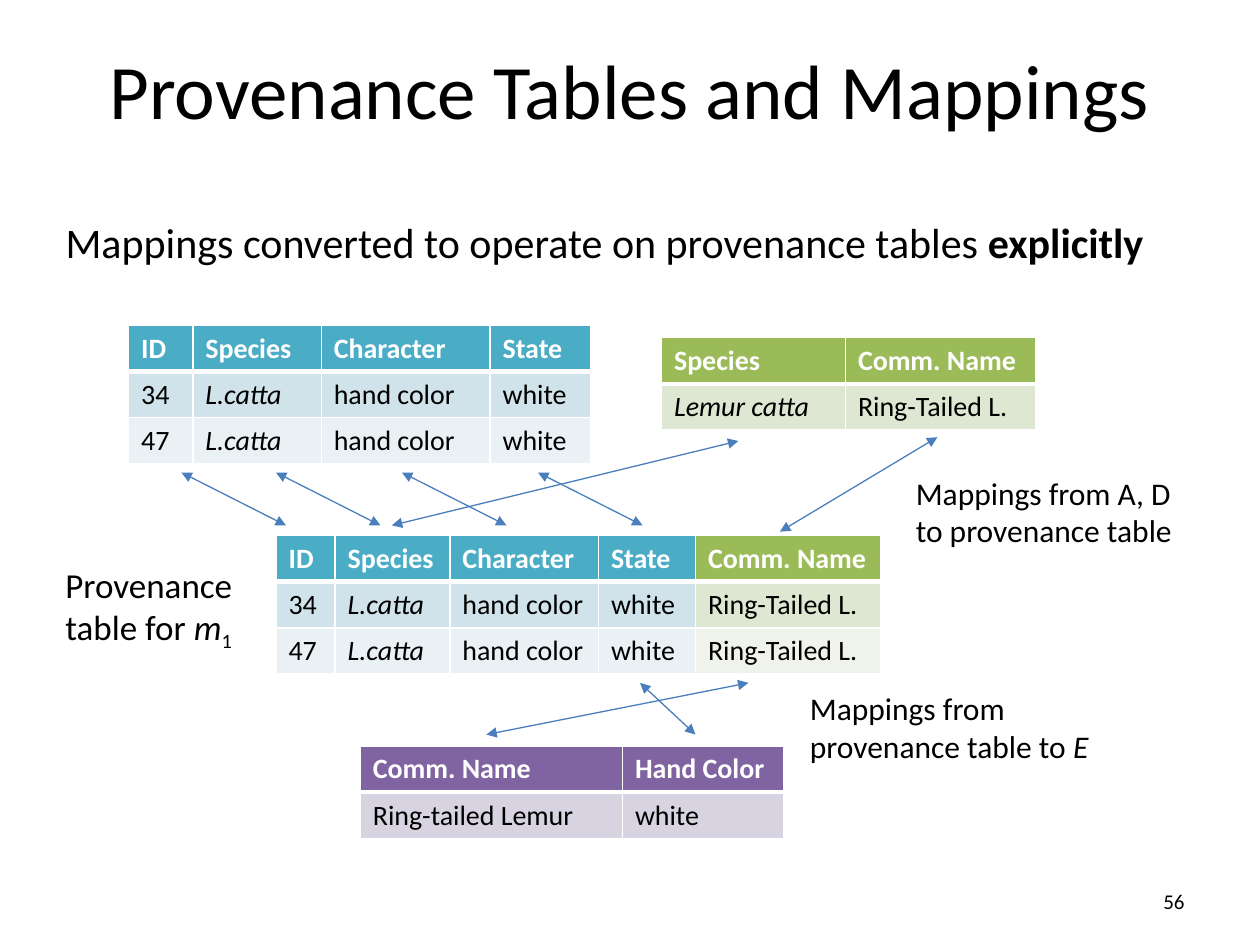
from dataclasses import dataclass

from lxml.etree import SubElement
from pptx import Presentation
from pptx.dml.color import RGBColor
from pptx.enum.shapes import MSO_CONNECTOR
from pptx.enum.text import MSO_ANCHOR, PP_ALIGN
from pptx.oxml.ns import qn
from pptx.util import Inches, Pt

BLACK = RGBColor(0x00, 0x00, 0x00)
WHITE = RGBColor(0xFF, 0xFF, 0xFF)
ARROW_BLUE = RGBColor(0x4B, 0x7E, 0xBC)
# Header fill, then the fills of alternating body rows
TEAL = (RGBColor(0x4B, 0xAC, 0xC6), RGBColor(0xD0, 0xE3, 0xEA), RGBColor(0xE9, 0xF1, 0xF5))
GREEN = (RGBColor(0x9B, 0xBB, 0x59), RGBColor(0xDE, 0xE7, 0xD1), RGBColor(0xEF, 0xF3, 0xEA))
PURPLE = (RGBColor(0x80, 0x64, 0xA2), RGBColor(0xD8, 0xD3, 0xE0))

ROW_HEIGHT = 1.1 / 3
OBSERVATIONS = [
    ["ID", "Species", "Character", "State"],
    ["34", "L.catta", "hand color", "white"],
    ["47", "L.catta", "hand color", "white"],
]


@dataclass
class SlideBuilder:
    slide: object
    font_name: str = "Calibri"
    line_width: float = 0.75

    def style_run(self, run, size, color=BLACK, bold=False, italic=False):
        font = run.font
        font.name, font.size = self.font_name, Pt(size)
        font.bold, font.italic = bold, italic
        font.color.rgb = color

    def add_runs(self, paragraph, pieces, size):
        """Add (text, style) pieces; a style is '', 'bold', 'italic' or 'subscript'."""
        for text, style in pieces:
            run = paragraph.add_run()
            run.text = text
            self.style_run(run, size, bold=style == "bold", italic=style == "italic")
            if style == "subscript":
                run.font._element.set("baseline", "-25000")

    def place(self, shape, left, top, width, height):
        shape.left, shape.top = Inches(left), Inches(top)
        shape.width, shape.height = Inches(width), Inches(height)

    def title(self, text, *box):
        shape = self.slide.shapes.title
        self.place(shape, *box)
        shape.text_frame.vertical_anchor = MSO_ANCHOR.MIDDLE
        paragraph = shape.text_frame.paragraphs[0]
        paragraph.text = text
        paragraph.alignment = PP_ALIGN.CENTER
        self.style_run(paragraph.runs[0], 44)

    def body(self, pieces, *box):
        shape = self.slide.placeholders[1]
        self.place(shape, *box)
        paragraph = shape.text_frame.paragraphs[0]
        self.add_runs(paragraph, pieces, 24)
        properties = paragraph._p.get_or_add_pPr()
        properties.set("marL", str(Inches(0.38)))
        properties.set("indent", str(Inches(-0.38)))
        SubElement(properties, qn("a:buNone"))

    def label(self, pieces, size, *box, alignment=PP_ALIGN.LEFT, anchor=MSO_ANCHOR.TOP):
        shape = self.slide.shapes.add_textbox(*map(Inches, box))
        text_frame = shape.text_frame
        text_frame.word_wrap = True
        text_frame.vertical_anchor = anchor
        text_frame.paragraphs[0].alignment = alignment
        self.add_runs(text_frame.paragraphs[0], pieces, size)

    def border(self, cell, side, width):
        line = SubElement(cell._tc.get_or_add_tcPr(), qn(f"a:{side}"), w=str(Pt(width)))
        fill = SubElement(line, qn("a:solidFill"))
        SubElement(fill, qn("a:srgbClr"), val=str(WHITE))

    def table(self, left, top, column_widths, rows, fills):
        frame = self.slide.shapes.add_table(
            len(rows), len(column_widths), Inches(left), Inches(top),
            Inches(sum(column_widths)), Inches(ROW_HEIGHT * len(rows)))
        table = frame.table
        for column, width in zip(table.columns, column_widths):
            column.width = Inches(width)
        for row_index, row in enumerate(rows):
            is_header = row_index == 0
            for column_index, text in enumerate(row):
                cell = table.cell(row_index, column_index)
                top_width = 3 if row_index == 1 else 1
                bottom_width = 3 if is_header else 1
                for side, width in (("lnL", 1), ("lnR", 1),
                                    ("lnT", top_width), ("lnB", bottom_width)):
                    self.border(cell, side, width)
                cell.fill.solid()
                cell.fill.fore_color.rgb = fills[row_index]
                paragraph = cell.text_frame.paragraphs[0]
                paragraph.text = text
                self.style_run(
                    paragraph.runs[0], 16, WHITE if is_header else BLACK, bold=is_header,
                    italic=not is_header and rows[0][column_index] == "Species")

    def double_arrow(self, start, end):
        connector = self.slide.shapes.add_connector(
            MSO_CONNECTOR.STRAIGHT, *map(Inches, (*start, *end)))
        connector.line.color.rgb = ARROW_BLUE
        connector.line.width = Pt(self.line_width)
        line = connector.line._get_or_add_ln()
        for arrowhead in ("a:headEnd", "a:tailEnd"):
            SubElement(line, qn(arrowhead), type="triangle")
        SubElement(connector._element.spPr, qn("a:effectLst"))


def main():
    presentation = Presentation()
    presentation.slide_width, presentation.slide_height = Inches(10), Inches(7.5)
    builder = SlideBuilder(presentation.slides.add_slide(presentation.slide_layouts[1]))

    builder.title("Provenance Tables and Mappings", 0.5, 0.08, 9, 1.25)
    builder.body([("Mappings converted to operate on provenance tables ", ""),
                  ("explicitly", "bold")], 0.42, 1.67, 9.08, 1)
    builder.label([("56", "")], 12, 7.17, 6.95, 2.33, 0.4,
                  alignment=PP_ALIGN.RIGHT, anchor=MSO_ANCHOR.MIDDLE)

    # Provenance table, joined from two parts
    builder.table(5.52, 4.25, [1.47],
                  [["Comm. Name"], ["Ring-Tailed L."], ["Ring-Tailed L."]], GREEN)
    builder.table(2.19, 4.25, [0.47, 0.91, 1.18, 0.77], OBSERVATIONS, TEAL)
    # Source tables
    builder.table(5.25, 2.68, [1.46, 1.51],
                  [["Species", "Comm. Name"], ["Lemur catta", "Ring-Tailed L."]], GREEN)
    builder.table(1.02, 2.58, [0.51, 1.02, 1.34, 0.8], OBSERVATIONS, TEAL)
    # Target table
    builder.table(2.86, 5.92, [2.08, 1.28],
                  [["Comm. Name", "Hand Color"], ["Ring-tailed Lemur", "white"]], PURPLE)

    for left in (1.44, 2.19, 3.19, 4.27):
        builder.double_arrow((left, 3.75), (left + 0.83, 4.17))
    builder.double_arrow((5.86, 3.5), (3.11, 4.17))
    builder.double_arrow((7.44, 3.47), (6.19, 4.22))
    for start, end in ((5.94, 3.86), (5.08, 5.52)):
        builder.double_arrow((start, 5.42), (end, 5.83))

    builder.label([("Provenance table for ", ""), ("m", "italic"), ("1", "subscript")],
                  20, 0.42, 4.42, 1.58, 0.77)
    builder.label([("Mappings from A, D to provenance table", "")],
                  18, 7.17, 3.71, 2.42, 0.71)
    builder.label([("Mappings from provenance table to ", ""), ("E", "italic")],
                  18, 6.33, 5.42, 2.67, 0.71)

    presentation.save("out.pptx")


if __name__ == "__main__":
    main()
